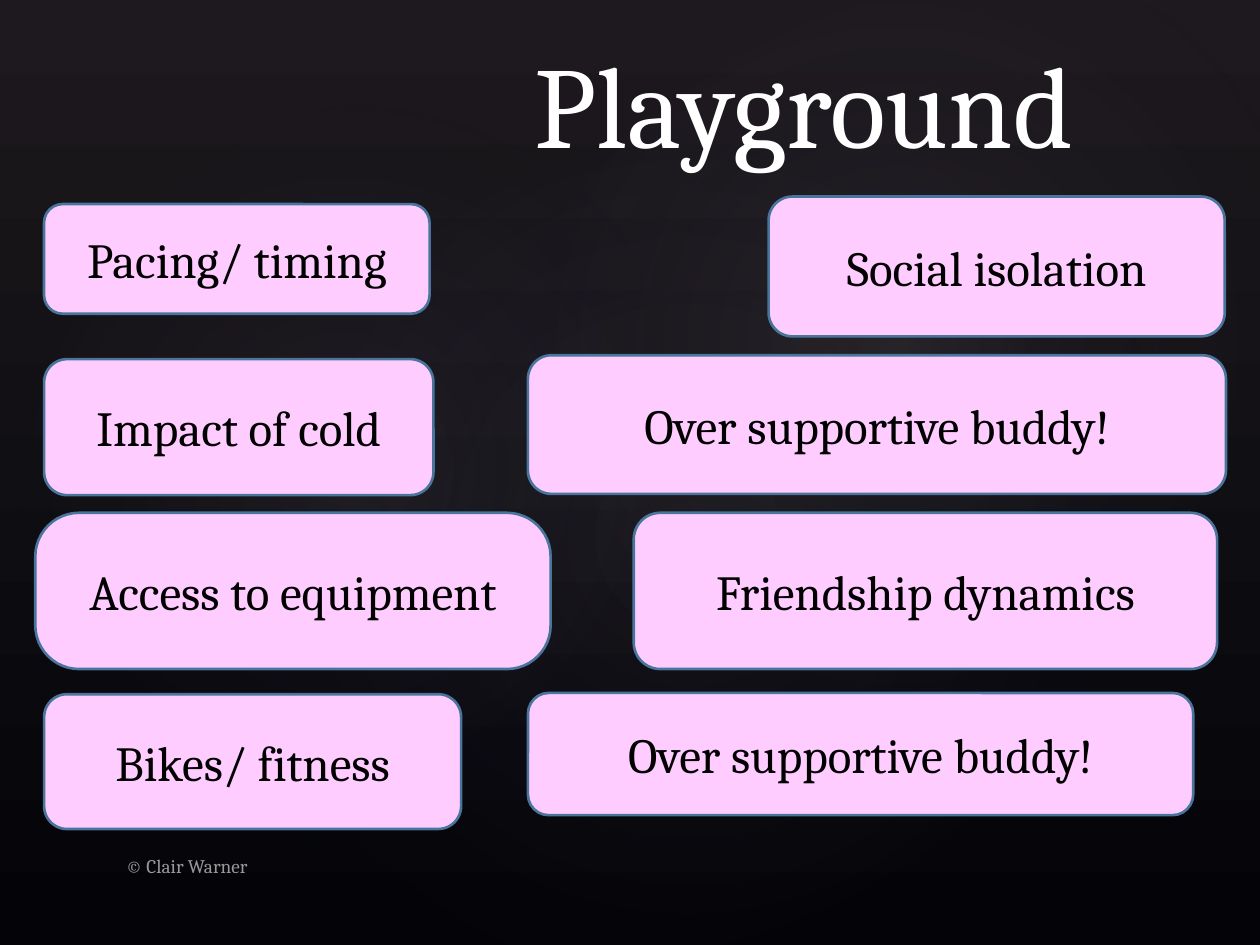
from pptx import Presentation
from pptx.dml.color import RGBColor
from pptx.enum.shapes import MSO_SHAPE as Shape
from pptx.enum.text import MSO_ANCHOR as Anchor, MSO_AUTO_SIZE as AutoSize, PP_ALIGN as Align
from pptx.oxml import parse_xml
from pptx.oxml.ns import nsdecls
from pptx.util import Inches, Pt

FONT = "Cambria"
WHITE = RGBColor(0xFF, 0xFF, 0xFF)
BLACK = RGBColor(0x00, 0x00, 0x00)
GREY = RGBColor(0x99, 0x99, 0x99)
PINK = RGBColor(0xFF, 0xCC, 0xFF)
STEEL = RGBColor(0x49, 0x74, 0x9B)
NIGHT_TOP = RGBColor(0x1D, 0x19, 0x1E)
NIGHT_BOTTOM = RGBColor(0x04, 0x04, 0x08)
HAZE = RGBColor(0xC4, 0xBC, 0xC6)
HAZE_EDGE = RGBColor(0x24, 0x28, 0x52)

# Box (left, top, width, height), rotation, opacity in percent
GLOWS = [
    ((1.5, 1.14, 7.92, 6.24), 328.7, 7),
    ((-0.3, 1.28, 6.06, 4.9), 294.3, 8),
    ((3.58, 0.13, 7.09, 5.2), 328.7, 8),
]
ROUNDING = 0.17
ISSUES = [
    ("Pacing/ timing", (0.35, 1.62, 3.06, 0.87), ROUNDING),
    ("Impact of cold", (0.35, 2.85, 3.09, 1.08), ROUNDING),
    ("Social isolation", (6.1, 1.56, 3.62, 1.11), ROUNDING),
    ("Over supportive buddy!", (4.19, 2.82, 5.54, 1.1), ROUNDING),
    ("Access to equipment", (0.28, 4.07, 4.09, 1.24), 0.28),
    ("Friendship dynamics", (5.03, 4.07, 4.63, 1.24), ROUNDING),
    ("Bikes/ fitness", (0.35, 5.51, 3.31, 1.07), ROUNDING),
    ("Over supportive buddy!", (4.19, 5.5, 5.28, 0.97), ROUNDING),
]


def inches(box):
    return [Inches(length) for length in box]


def write(frame, text, size, color, align, anchor):
    frame.word_wrap = True
    frame.auto_size = AutoSize.NONE
    frame.vertical_anchor = anchor
    paragraph = frame.paragraphs[0]
    paragraph.text = text
    paragraph.alignment = align
    font = paragraph.font
    font.name, font.size, font.color.rgb = FONT, Pt(size), color


def paint_background(slide):
    fill = slide.background.fill
    fill.gradient()
    fill.gradient_angle = 270
    for stop, position, color in zip(fill.gradient_stops, (0, 1), (NIGHT_TOP, NIGHT_BOTTOM)):
        stop.position = position
        stop.color.rgb = color


def add_glow(slide, box, rotation, opacity):
    """Place a faint radial haze behind the title and the cards."""
    glow = slide.shapes.add_shape(Shape.OVAL, *inches(box))
    glow.rotation = rotation
    glow.shadow.inherit = False
    glow.line.fill.background()
    glow.fill.background()
    no_fill = glow.element.spPr.find("{*}noFill")
    no_fill.addprevious(parse_xml(
        f'<a:gradFill {nsdecls("a")} rotWithShape="1"><a:gsLst>'
        f'<a:gs pos="0"><a:srgbClr val="{HAZE}"><a:alpha val="{opacity * 1000}"/></a:srgbClr></a:gs>'
        f'<a:gs pos="58000"><a:srgbClr val="{HAZE_EDGE}"><a:alpha val="0"/></a:srgbClr></a:gs>'
        '</a:gsLst><a:path path="circle">'
        '<a:fillToRect l="50000" t="50000" r="50000" b="50000"/></a:path></a:gradFill>'))
    glow.element.spPr.remove(no_fill)
    slide.shapes.title.element.addprevious(glow.element)


def place_title(slide, text, box):
    title = slide.shapes.title
    title.left, title.top, title.width, title.height = inches(box)
    write(title.text_frame, text, 66, WHITE, Align.CENTER, Anchor.TOP)


def add_copyright(slide, text, box):
    notice = slide.shapes.add_textbox(*inches(box))
    write(notice.text_frame, text, 11, GREY, Align.LEFT, Anchor.TOP)


def add_issue(slide, text, box, rounding):
    card = slide.shapes.add_shape(Shape.ROUNDED_RECTANGLE, *inches(box))
    card.adjustments[0] = rounding
    card.shadow.inherit = False
    card.fill.solid()
    card.fill.fore_color.rgb = PINK
    card.line.color.rgb = STEEL
    card.line.width = Pt(1.5)
    write(card.text_frame, text, 28, BLACK, Align.CENTER, Anchor.MIDDLE)


def main():
    deck = Presentation()
    deck.slide_width, deck.slide_height = Inches(10), Inches(7.5)
    slide = deck.slides.add_slide(deck.slide_layouts[5])
    paint_background(slide)
    for glow in GLOWS:
        add_glow(slide, *glow)
    place_title(slide, "Playground", (2.95, 0.21, 6.86, 1.21))
    add_copyright(slide, "© Clair Warner", (0.9, 6.73, 5, 0.4))
    for issue in ISSUES:
        add_issue(slide, *issue)
    deck.save("out.pptx")


if __name__ == "__main__":
    main()
